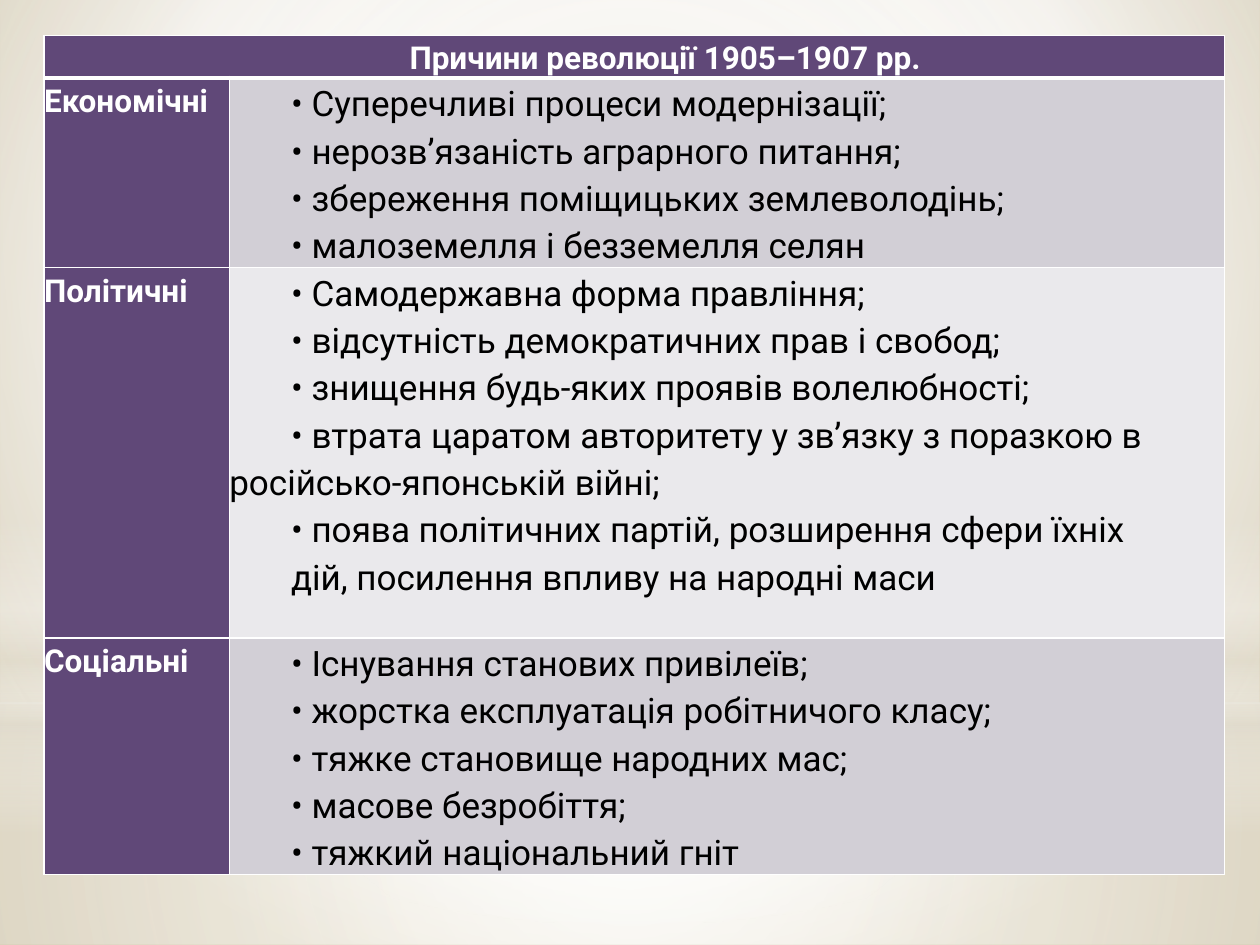
from lxml import etree
from pptx import Presentation
from pptx.dml.color import RGBColor
from pptx.enum import shapes, text
from pptx.oxml import ns
from pptx.util import Pt

HUES = {
    "white": "FFFFFF", "black": "000000", "sand": "E3DED1",
    "edge": "DED7C4", "tan": "CABB94",
    "plum": "604878", "dark": "D2CFD6", "light": "EAE9EC",
}
FONT = "Roboto"
HEAD = "Причини революції 1905–1907 рр."
ROWS = [
    ("Економічні", 104.4, [
        "• Суперечливі процеси модернізації;",
        "• нерозв’язаність аграрного питання;",
        "• збереження поміщицьких землеволодінь;",
        "• малоземелля і безземелля селян",
    ]),
    ("Політичні", 211.68, [
        "• Самодержавна форма правління;",
        "• відсутність демократичних прав і свобод;",
        "• знищення будь-яких проявів волелюбності;",
        "• втрата царатом авторитету у зв’язку з поразкою в російсько-японській війні;",
        "• поява політичних партій, розширення сфери їхніх",
        "дій, посилення впливу на народні маси",
    ]),
    ("Соціальні", 131.76, [
        "• Існування станових привілеїв;",
        "• жорстка експлуатація робітничого класу;",
        "• тяжке становище народних мас;",
        "• масове безробіття;",
        "• тяжкий національний гніт",
    ]),
]
MID = (50, 50, 50, 50)


def color(name):
    return RGBColor.from_string(HUES[name])


def sub(node, tag, **attrs):
    return etree.SubElement(node, ns.qn(tag), {k: str(v) for k, v in attrs.items()})


def blend(root, stops, to=None):
    grad = root.find(".//" + ns.qn("a:gradFill"))
    for kid in list(grad):
        grad.remove(kid)
    items = sub(grad, "a:gsLst")
    for pos, name, alpha in stops:
        stop = sub(items, "a:gs", pos=pos * 1000)
        tint = sub(stop, "a:srgbClr", val=HUES[name])
        if alpha < 100:
            sub(tint, "a:alpha", val=alpha * 1000)
    if to:
        ring = sub(grad, "a:path", path="circle")
        sub(ring, "a:fillToRect", **{k: v * 1000 for k, v in zip("ltrb", to)})
    else:
        sub(grad, "a:lin", ang=90 * 60000, scaled=0)


def add_glow(slide, kind, box, stops, to=None):
    shape = slide.shapes.add_shape(kind, *map(Pt, box))
    shape.shadow.inherit = False
    shape.line.fill.background()
    shape.fill.gradient()
    blend(shape.element, stops, to)


def add_back(slide, box):
    x, y, w, h = box
    rect, oval = shapes.MSO_SHAPE.RECTANGLE, shapes.MSO_SHAPE.OVAL
    slide.background.fill.gradient()
    blend(slide.element, [(0, "edge", 100), (60, "white", 100), (100, "tan", 100)],
          (20, 10, 20, 60))
    split = 401.76
    add_glow(slide, rect, (x, y + split, w, h - split),
             [(0, "white", 91), (37, "white", 76), (100, "sand", 79)], MID)
    add_glow(slide, rect, (x, y, w, split),
             [(0, "white", 89), (48, "white", 62), (100, "sand", 79)], MID)
    add_glow(slide, rect, (x, y + 296.64, w, 180),
             [(0, "white", 0), (29, "white", 30), (45, "sand", 40),
              (55, "white", 26), (65, "sand", 60), (100, "white", 0)])
    add_glow(slide, oval, (x, y + 126, w, split),
             [(0, "white", 100), (56, "white", 0)], MID)


def fill_cell(cell, lines, fill, size, ink, bold=False, inset=0, align=None, base=1):
    cell.margin_left = cell.margin_right = cell.margin_top = cell.margin_bottom = 0
    cell.fill.solid()
    cell.fill.fore_color.rgb = color(fill)
    props = cell._tc.get_or_add_tcPr()
    for i, side in enumerate("LRTB"):
        line = sub(props, "a:ln" + side, w=Pt(base if side == "B" else 1))
        sub(sub(line, "a:solidFill"), "a:srgbClr", val=HUES["white"])
        props.insert(i, line)
    frame = cell.text_frame
    for i, words in enumerate(lines):
        para = frame.add_paragraph() if i else frame.paragraphs[0]
        para.line_spacing = 1.15
        para.alignment = align or text.PP_ALIGN.LEFT
        para._p.get_or_add_pPr().set("marL", "0")
        para._p.get_or_add_pPr().set("indent", str(Pt(inset)))
        run = para.add_run()
        run.text = words
        font = run.font
        font.name, font.size, font.bold = FONT, Pt(size), bold
        font.color.rgb = color(ink)


def add_grid(slide, box):
    x, y, w, h = box
    grid = slide.shapes.add_table(len(ROWS) + 1, 2, *map(Pt, box)).table
    side = 105.84
    grid.columns[0].width, grid.columns[1].width = Pt(side), Pt(w - side)
    grid.rows[0].height = Pt(24.48)
    grid.cell(0, 0).merge(grid.cell(0, 1))
    for col, lines in enumerate(([HEAD], [])):
        fill_cell(grid.cell(0, col), lines, "plum", 18, "white", True, 35.28,
                  text.PP_ALIGN.CENTER, 3)
    for i, (name, high, lines) in enumerate(ROWS, 1):
        grid.rows[i].height = Pt(high)
        fill_cell(grid.cell(i, 0), [name], "plum", 18, "white", True)
        fill_cell(grid.cell(i, 1), lines, "dark" if i % 2 else "light", 20, "black",
                  inset=35.28)


def main():
    deck = Presentation()
    deck.slide_width, deck.slide_height = Pt(720), Pt(540)
    slide = deck.slides.add_slide(deck.slide_layouts[6])
    add_back(slide, (0, 0, 720, 540))
    add_grid(slide, (25.2, 20.16, 674.64, 472.32))
    deck.save("out.pptx")


if __name__ == "__main__":
    main()
